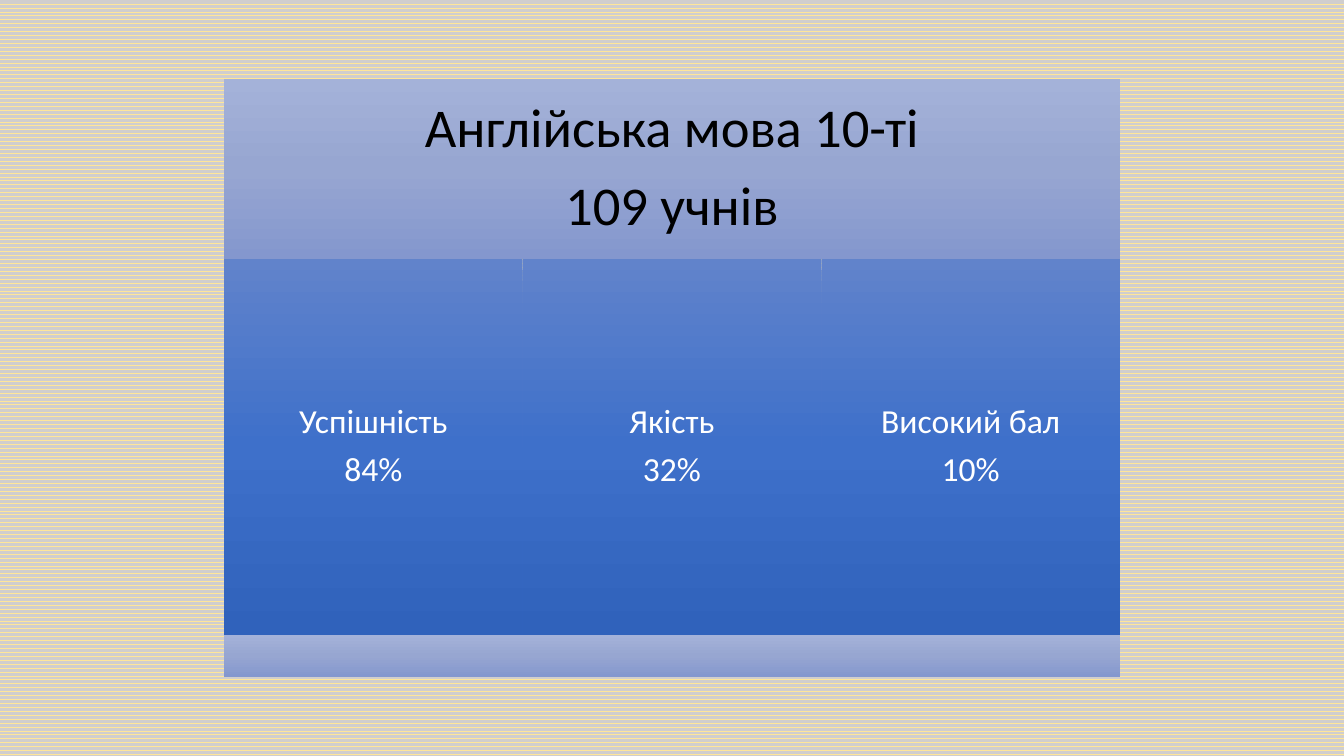
from copy import deepcopy

from pptx import Presentation
from pptx.dml.color import RGBColor
from pptx.enum.dml import MSO_PATTERN
from pptx.enum.shapes import MSO_SHAPE
from pptx.enum.text import MSO_ANCHOR, PP_ALIGN
from pptx.oxml.ns import qn
from pptx.util import Inches, Pt

HUES = {
    "gold": "FFE699", "gray": "D0CECE", "ink": "000000", "white": "FFFFFF",
    "pale": ("A4B2D9", "97A6D1", "8497CE"),
    "deep": ("6183CB", "3E70CA", "3062BB"),
}
WIDE, HIGH = 13.33, 7.5
COL = WIDE / 12
ROW = HIGH * 0.79 / 100
TOP = HIGH * 0.105
MARKS = (("Успішність", "84%"), ("Якість", "32%"), ("Високий бал", "10%"))


class Panel:
    """Draws on one slide in columns of a twelfth and rows of a hundredth of the panel."""

    def __init__(self, deck):
        self.font = "Calibri"
        self.slide = deck.slides.add_slide(deck.slide_layouts[6])

    def hue(self, name):
        return RGBColor.from_string(HUES[name])

    def back(self, fore, base):
        fill = self.slide.background.fill
        fill.patterned()
        fill.pattern = MSO_PATTERN.WAVE
        fill.fore_color.rgb = self.hue(fore)
        fill.back_color.rgb = self.hue(base)

    def block(self, col, row, cols, rows, tone):
        box = self.slide.shapes.add_shape(
            MSO_SHAPE.RECTANGLE, Inches(col * COL), Inches(TOP + row * ROW),
            Inches(cols * COL), Inches(rows * ROW))
        box.shadow.inherit = False
        box.line.fill.background()
        box.fill.gradient()
        box.fill.gradient_angle = 270
        stops = box.element.find(".//" + qn("a:gsLst"))
        stops.append(deepcopy(stops[0]))
        for i, stop in enumerate(box.fill.gradient_stops):
            stop.position = i / 2
            stop.color.rgb = RGBColor.from_string(HUES[tone][i])
        return box

    def text(self, box, lines, size, tone, inset):
        frame = box.text_frame
        frame.word_wrap = True
        frame.vertical_anchor = MSO_ANCHOR.MIDDLE
        frame.margin_left = frame.margin_right = Inches(inset)
        frame.margin_top = frame.margin_bottom = Inches(inset)
        frame.text = "\n".join(lines)
        for para in frame.paragraphs:
            para.alignment = PP_ALIGN.CENTER
            para.line_spacing = 0.9
            para.space_after = Pt(size * 0.35)
            for run in para.runs:
                run.font.name = self.font
                run.font.size = Pt(size)
                run.font.color.rgb = self.hue(tone)


def main():
    deck = Presentation()
    deck.slide_width, deck.slide_height = Inches(WIDE), Inches(HIGH)
    panel = Panel(deck)
    panel.back("gold", "gray")
    head = panel.block(2, 0, 8, 30, "pale")
    panel.text(head, ("Англійська мова 10-ті", "109 учнів"), 39, "ink", 0.16)
    span = 8 / len(MARKS)
    for i, mark in enumerate(MARKS):
        cell = panel.block(2 + i * span, 30, span, 63, "deep")
        panel.text(cell, mark, 24, "white", 0.1)
    panel.block(2, 93, 8, 7, "pale")
    deck.save("out.pptx")


if __name__ == "__main__":
    main()
